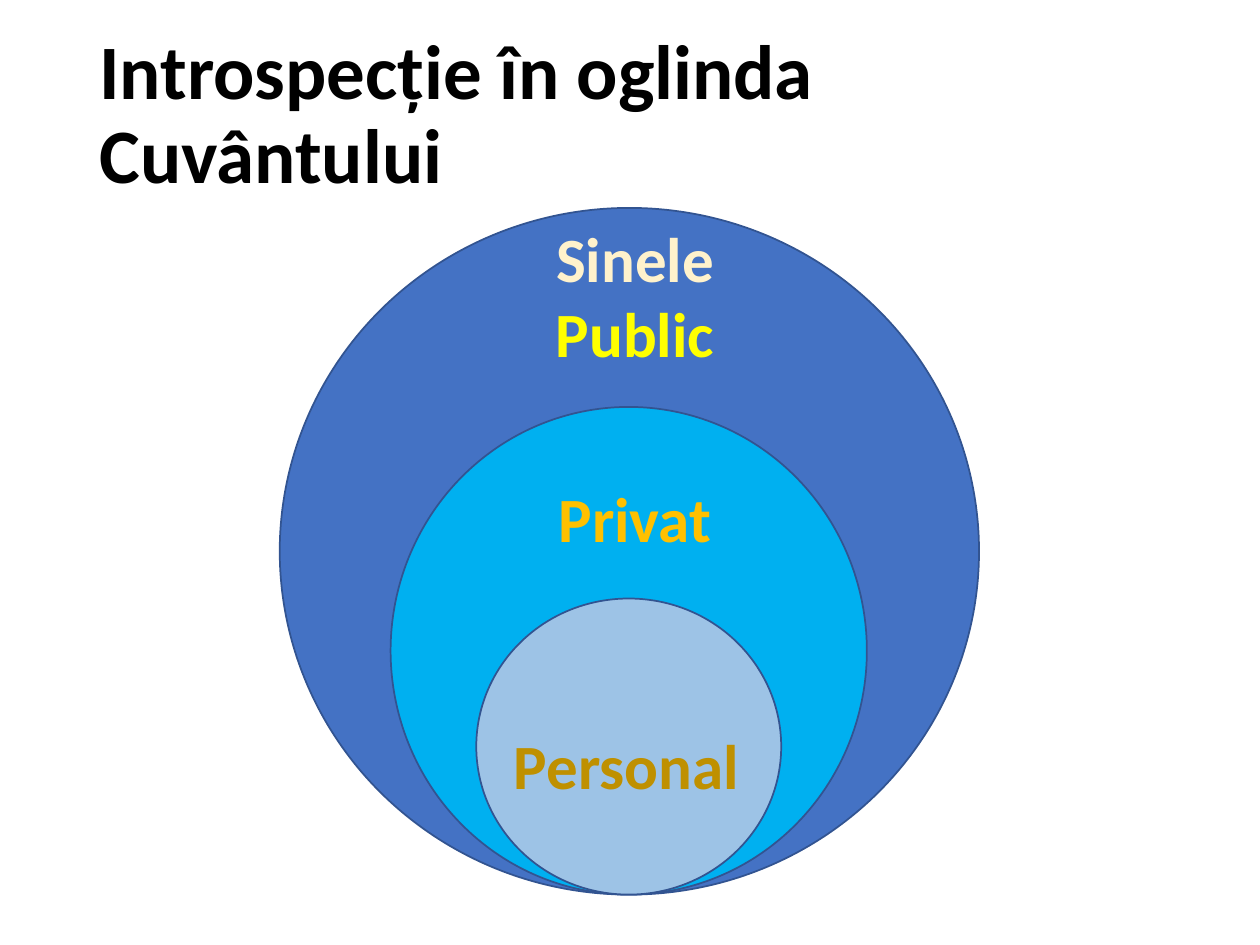
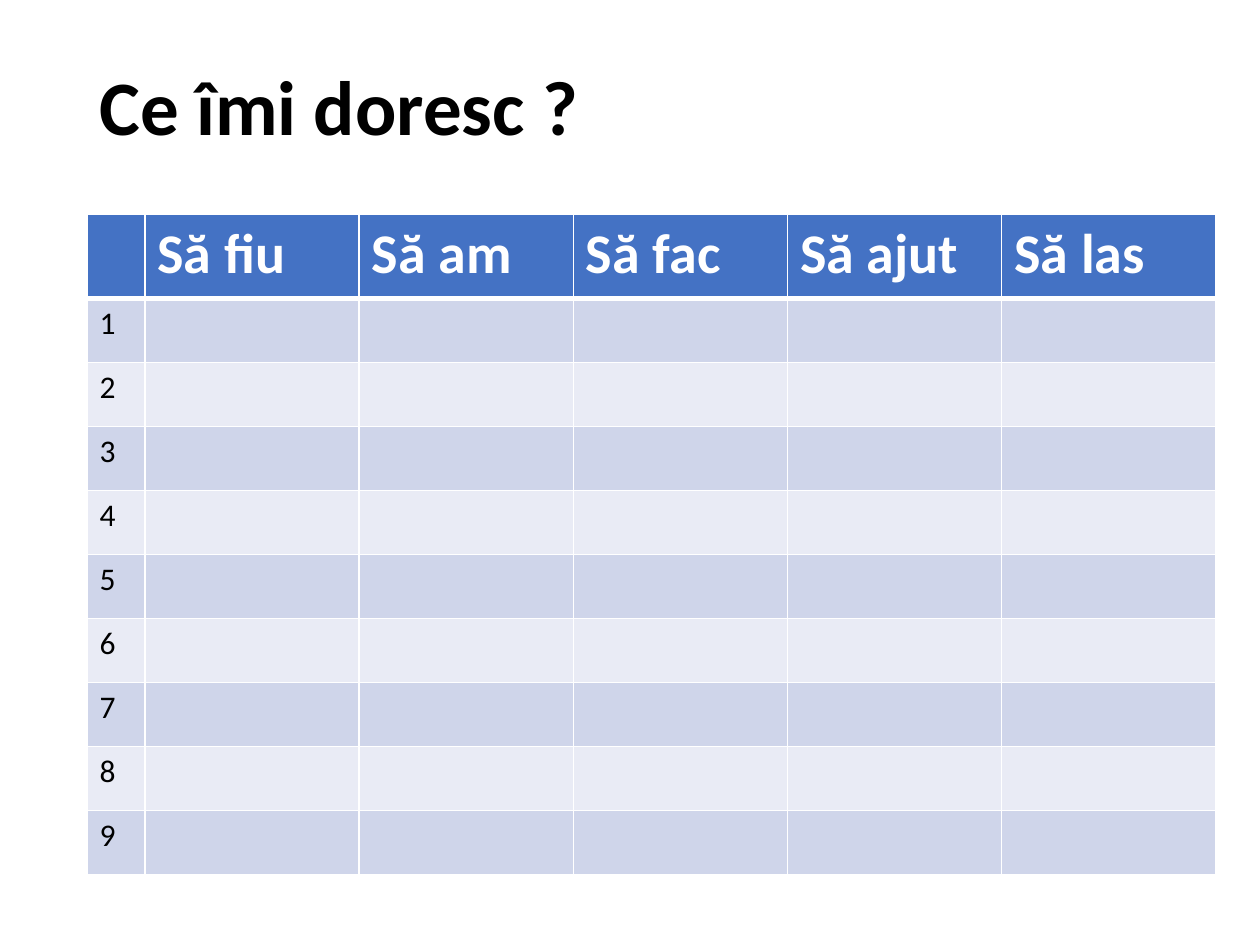
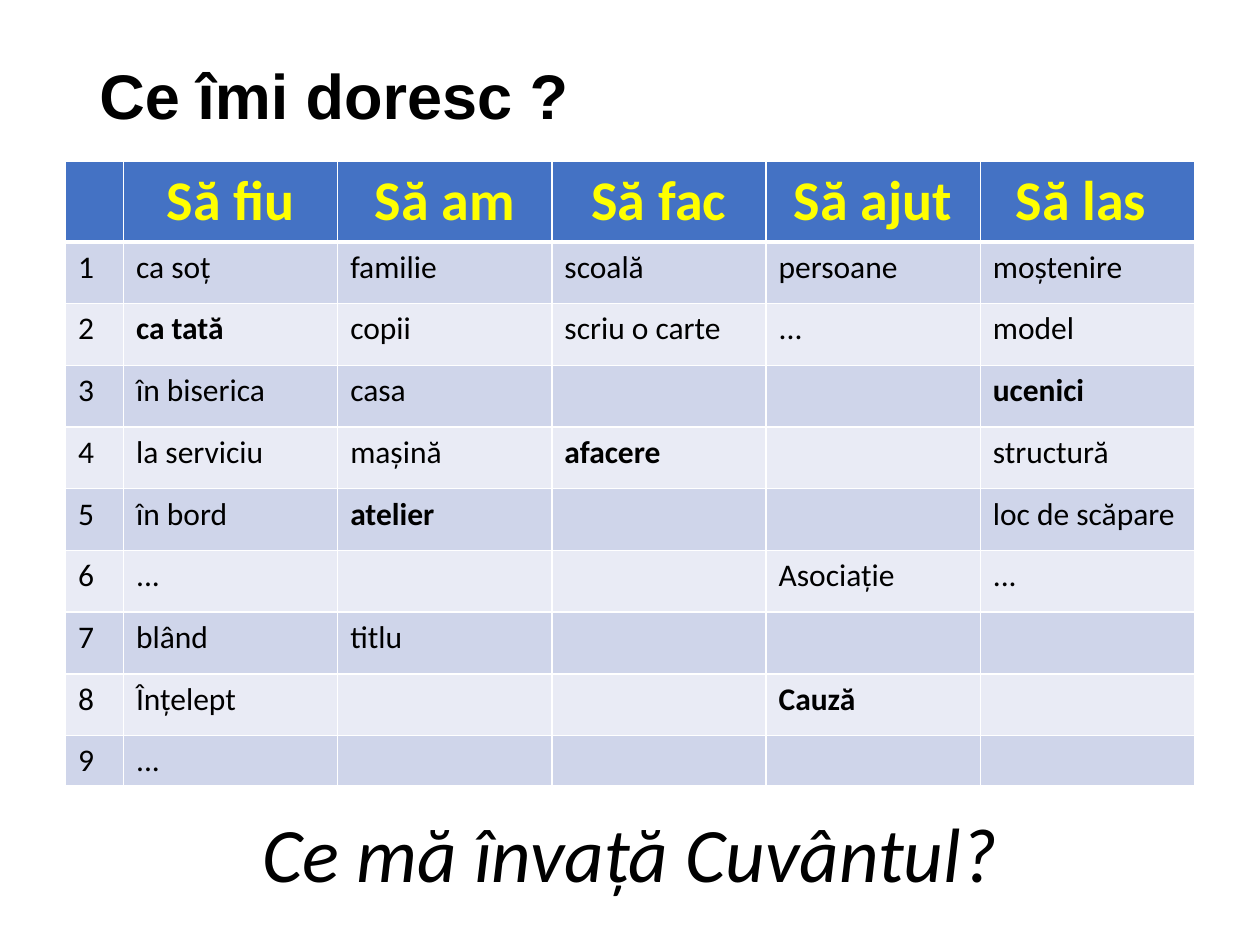
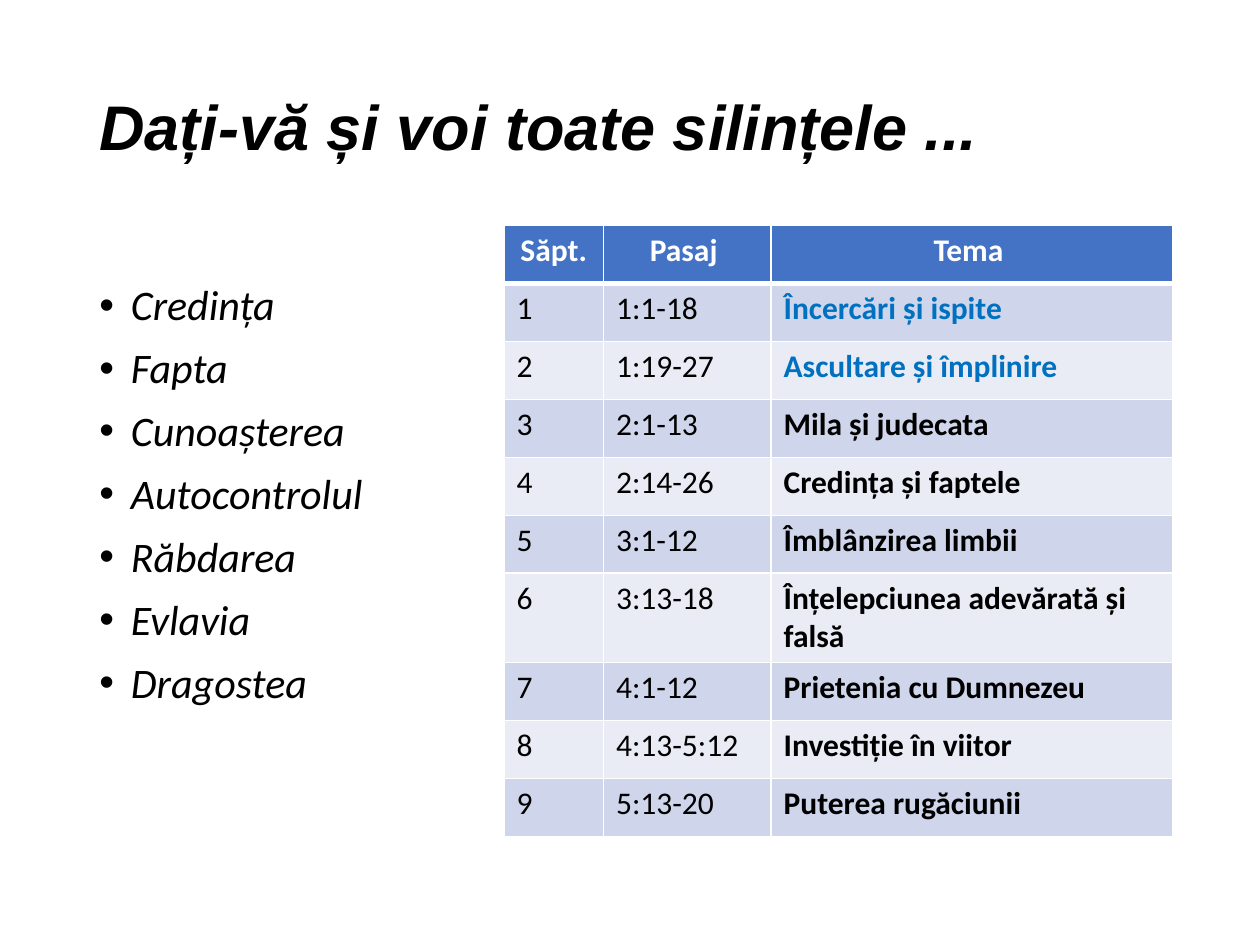
from dataclasses import dataclass
from lxml.etree import SubElement
from pptx import Presentation
from pptx.dml.color import RGBColor
from pptx.enum.shapes import MSO_SHAPE
from pptx.enum.text import MSO_ANCHOR, PP_ALIGN
from pptx.oxml.ns import qn
from pptx.util import Inches, Pt


@dataclass(frozen=True)
class Theme:
    font: str = "Calibri"
    title_font: str = "Arial"
    black: str = "000000"
    white: str = "FFFFFF"
    blue: str = "4472C4"
    outline: str = "325491"
    sky: str = "00B0F0"
    pale_blue: str = "9DC3E6"
    bands: tuple = ("CFD5EA", "E9EBF5")
    link_blue: str = "0070C0"
    yellow: str = "FFFF00"
    cream: str = "FFF2CC"
    gold: str = "FFC000"
    dark_gold: str = "BF9000"
    title: int = 44
    label: int = 36
    header: int = 32
    bullet: int = 24
    cell: int = 18


T = Theme()


def add_text(shapes, box, lines, size, font=T.font, colors=(T.black,), bold=False, italic=False,
             align=PP_ALIGN.LEFT, anchor=MSO_ANCHOR.TOP, spacing=None):
    tf = shapes.add_textbox(*map(Inches, box)).text_frame
    tf.word_wrap = True
    tf.vertical_anchor = anchor
    tf.text = "\n".join(lines)
    for i, p in enumerate(tf.paragraphs):
        p.alignment = align
        p.line_spacing = spacing
        f = p.runs[0].font
        f.name, f.size, f.bold, f.italic = font, Pt(size), bold, italic
        f.color.rgb = RGBColor.from_string(colors[i % len(colors)])
    return tf


def add_grid(s, left, top, widths, heights, rows, header_size, header_color, header_align, bold, blue=()):
    frame = s.shapes.add_table(len(rows), len(widths), Inches(left), Inches(top),
                               Inches(sum(widths)), Inches(sum(heights)))
    table = frame.table
    for column, width in zip(table.columns, widths):
        column.width = Inches(width)
    for i, (row, height) in enumerate(zip(rows, heights)):
        table.rows[i].height = Inches(height)
        for j, text in enumerate(row):
            cell = table.cell(i, j)
            tcPr = cell._tc.get_or_add_tcPr()
            for side in "LRTB":
                thick = (i, side) in ((0, "B"), (1, "T"))
                ln = SubElement(tcPr, qn(f"a:ln{side}"), w=str(Pt(3 if thick else 1)))
                SubElement(SubElement(ln, qn("a:solidFill")), qn("a:srgbClr"), val=T.white)
            cell.fill.solid()
            cell.fill.fore_color.rgb = RGBColor.from_string(T.bands[(i - 1) % 2] if i else T.blue)
            if not text:
                continue
            cell.text = text
            p = cell.text_frame.paragraphs[0]
            p.alignment = PP_ALIGN.LEFT if i else header_align
            f = p.runs[0].font
            f.name, f.size = T.font, Pt(T.cell if i else header_size)
            f.bold = i == 0 or text in bold
            color = header_color if i == 0 else T.link_blue if text in blue else T.black
            f.color.rgb = RGBColor.from_string(color)


prs = Presentation()
prs.slide_width, prs.slide_height = Inches(10), Inches(7.5)

titles = [
    ("Introspecție în oglinda Cuvântului", 1.05, T.title, T.font, False),
    ("Ce îmi doresc ?", 0.95, T.title, T.font, False),
    ("Ce îmi doresc ?", 0.77, T.label, T.title_font, False),
    ("Dați-vă și voi toate silințele ...", 1.26, T.label, T.title_font, True),
]
for title, height, size, font, italic in titles:
    s = prs.slides.add_slide(prs.slide_layouts[6])
    add_text(s.shapes, (0.69, 0.4, 8.62, height), [title], size, font, bold=True, italic=italic,
             anchor=MSO_ANCHOR.MIDDLE, spacing=0.9)
self_slide, blank_slide, wishes_slide, plan_slide = prs.slides

group = self_slide.shapes.add_group_shape()
circles = [(2.22, 5.55, 5.45, T.blue), (3.1, 3.78, 3.87, T.sky), (3.78, 2.42, 2.35, T.pale_blue)]
for left, width, height, color in circles:
    sp = group.shapes.add_shape(MSO_SHAPE.OVAL, Inches(left), Inches(7.1 - height),
                                Inches(width), Inches(height))
    sp.shadow.inherit = False
    sp.fill.solid()
    sp.fill.fore_color.rgb = RGBColor.from_string(color)
    sp.line.color.rgb = RGBColor.from_string(T.outline)
    sp.line.width = Pt(1)

labels = [
    (5.72, 0.71, ["Personal"], [T.dark_gold], PP_ALIGN.LEFT),
    (3.76, 0.71, ["Privat"], [T.gold], PP_ALIGN.CENTER),
    (1.69, 1.31, ["Sinele", "Public"], [T.cream, T.yellow], PP_ALIGN.CENTER),
]
for top, height, lines, colors, align in labels:
    add_text(group.shapes, (3.98, top, 2.12, height), lines, T.label, colors=colors, bold=True, align=align)

wish_widths = [0.46] + [1.7] * 5
wish_header = ["", "Să fiu", "Să am", "Să fac", "Să ajut", "Să las"]
blank_rows = [wish_header] + [[str(n)] + [""] * 5 for n in range(1, 10)]
add_grid(blank_slide, 0.69, 1.7, wish_widths, [0.67] + [0.508] * 9, blank_rows,
         T.header, T.white, PP_ALIGN.LEFT, ())

wishes = [
    ["ca soț", "familie", "scoală", "persoane", "moștenire"],
    ["ca tată", "copii", "scriu o carte", "...", "model"],
    ["în biserica", "casa", "", "", "ucenici"],
    ["la serviciu", "mașină", "afacere", "", "structură"],
    ["în bord", "atelier", "", "", "loc de scăpare"],
    ["...", "", "", "Asociație", "..."],
    ["blând", "titlu", "", "", ""],
    ["Înțelept", "", "", "Cauză", ""],
    ["...", "", "", "", ""],
]
wish_rows = [wish_header[:-1] + ["Să las "]] + [[str(n)] + row for n, row in enumerate(wishes, 1)]
add_grid(wishes_slide, 0.52, 1.28, wish_widths, [0.64] + [0.49] * 8 + [0.38], wish_rows,
         T.header, T.yellow, PP_ALIGN.CENTER, ("ca tată", "ucenici", "afacere", "atelier", "Cauză"))
add_text(wishes_slide.shapes, (0.69, 6.33, 8.62, 0.95), ["Ce mă învață Cuvântul?"], T.title, italic=True,
         align=PP_ALIGN.CENTER, anchor=MSO_ANCHOR.MIDDLE, spacing=0.9)

virtues = ["Credința", "Fapta", "Cunoașterea", "Autocontrolul", "Răbdarea", "Evlavia", "Dragostea"]
tf = add_text(plan_slide.shapes, (0.69, 2.21, 2.51, 4.55), virtues, T.bullet, italic=True, spacing=0.9)
for p in tf.paragraphs:
    p.space_before = Pt(10)
    pPr = p._p.get_or_add_pPr()
    pPr.set("marL", str(Inches(0.25)))
    pPr.set("indent", str(-Inches(0.25)))
    SubElement(pPr, qn("a:buFont"), typeface=T.title_font)
    SubElement(pPr, qn("a:buChar"), char="•")

studies = [
    ("1:1-18", "Încercări și ispite"),
    ("1:19-27", "Ascultare și împlinire"),
    ("2:1-13", "Mila și judecata"),
    ("2:14-26", "Credința și faptele"),
    ("3:1-12", "Îmblânzirea limbii"),
    ("3:13-18", "Înțelepciunea adevărată și falsă"),
    ("4:1-12", "Prietenia cu Dumnezeu"),
    ("4:13-5:12", "Investiție în viitor"),
    ("5:13-20", "Puterea rugăciunii"),
]
themes = [theme for passage, theme in studies]
study_rows = [["Săpt.", "Pasaj ", "Tema "]] + [[str(n), *study] for n, study in enumerate(studies, 1)]
add_grid(plan_slide, 4, 1.79, [0.79, 1.33, 3.19], [0.46] * 6 + [0.71] + [0.46] * 3, study_rows,
         T.cell, T.white, PP_ALIGN.CENTER, themes, themes[:2])

prs.save("out.pptx")
